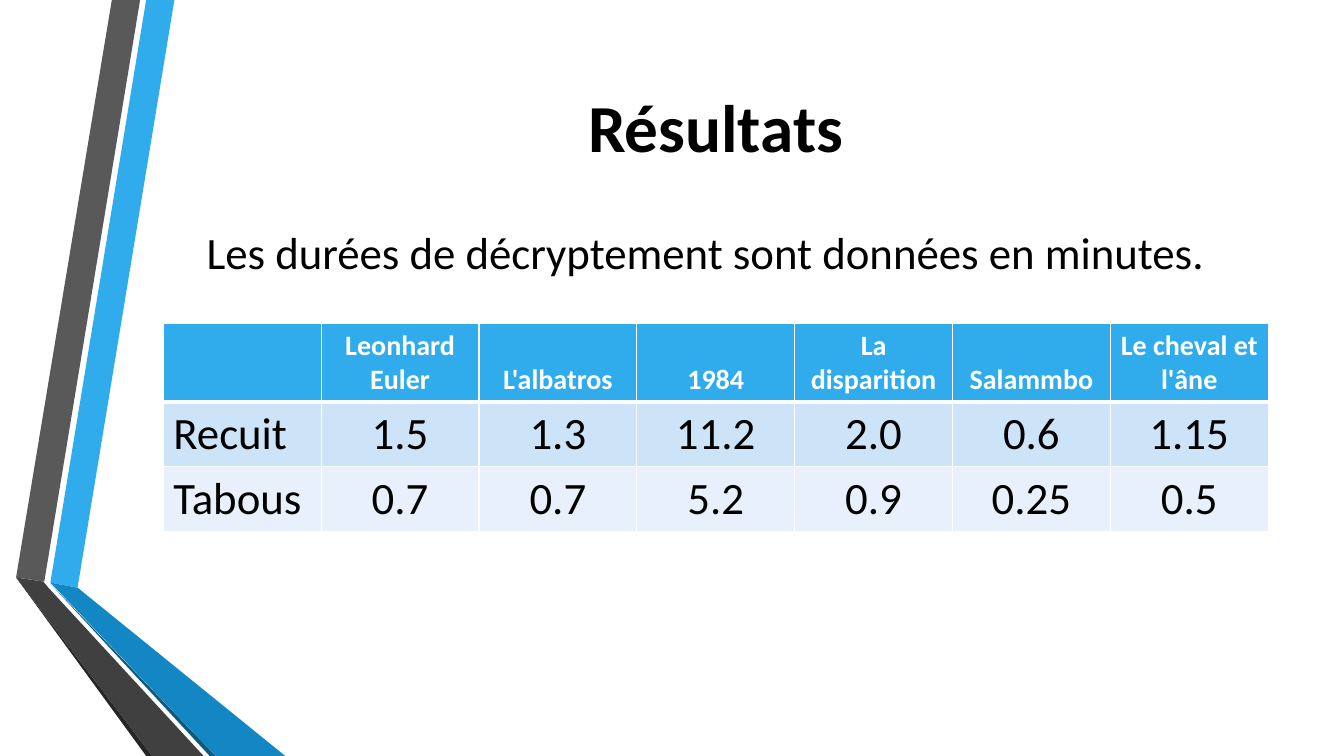
from dataclasses import dataclass
from lxml.etree import SubElement
from pptx import Presentation
from pptx.dml.color import RGBColor
from pptx.enum.text import MSO_ANCHOR, PP_ALIGN
from pptx.oxml.ns import qn

PX = 9144


@dataclass(frozen=True)
class Theme:
    font: str = "Calibri"
    black: str = "000000"
    white: str = "FFFFFF"
    blue: str = "30ACEC"
    deep: str = "1287C3"
    navy: str = "0C5A82"
    gray: str = "595959"
    dark: str = "404040"
    coal: str = "262626"
    bands: tuple = ("CDE3F8", "E8F1FB")
    title: int = 48
    body: int = 32
    head: int = 20


THEME = Theme()

RIBBONS = [
    (THEME.blue, [(50, 578), (77, 583), (173, 0), (145, 0)]),
    (THEME.gray, [(139, 0), (111, 0), (16, 573), (44, 577)]),
    (THEME.coal, [(16, 573), (145, 750), (151, 750)]),
    (THEME.navy, [(50, 579), (208, 750), (214, 750)]),
    (THEME.deep, [(50, 578), (214, 750), (283, 750), (77, 583)]),
    (THEME.dark, [(202, 750), (48, 583), (43, 577), (16, 573), (151, 750)]),
]

HEADS = ["", "Leonhard\nEuler", "L'albatros", "1984", "La disparition",
         "Salammbo", "Le cheval et l'âne"]
TIMES = [
    ["Recuit", "1.5", "1.3", "11.2", "2.0", "0.6", "1.15"],
    ["Tabous", "0.7", "0.7", "5.2", "0.9", "0.25", "0.5"],
]


def paint(fill, color):
    fill.solid()
    fill.fore_color.rgb = RGBColor.from_string(color)


def write(frame, text, size, color, bold=False, align=PP_ALIGN.LEFT):
    frame.text = text
    form = {"name": THEME.font, "size": size * 12700, "bold": bold}
    for para in frame.paragraphs:
        para.alignment = align
        for run in para.runs:
            for key, value in form.items():
                setattr(run.font, key, value)
            run.font.color.rgb = RGBColor.from_string(color)


def add_text(slide, box, text, size, anchor, **form):
    frame = slide.shapes.add_textbox(*(n * PX for n in box)).text_frame
    frame.word_wrap = True
    frame.vertical_anchor = anchor
    write(frame, text, size, THEME.black, **form)


def add_ribbons(slide, left, top):
    for color, points in RIBBONS:
        start, *rest = [(left + x, top + y) for x, y in points]
        pen = slide.shapes.build_freeform(*start, scale=PX)
        pen.add_line_segments(rest, close=True)
        shape = pen.convert_to_shape()
        shape.shadow.inherit = False
        paint(shape.fill, color)
        shape.line.fill.background()


def add_edges(cell, widths):
    props = cell._tc.get_or_add_tcPr()
    for spot, (side, width) in enumerate(widths.items()):
        edge = SubElement(props, qn(f"a:ln{side}"), w=str(width * 12700))
        fill = SubElement(edge, qn("a:solidFill"))
        SubElement(fill, qn("a:srgbClr"), val=THEME.white)
        props.insert(spot, edge)


def add_times(slide, box):
    rows = [HEADS] + TIMES
    left, top, width, height = (n * PX for n in box)
    table = slide.shapes.add_table(
        len(rows), len(HEADS), left, top, width, height).table
    for col in table.columns:
        col.width = width // len(HEADS)
    for r, row in enumerate(rows):
        head = r == 0
        table.rows[r].height = (78 if head else 64) * PX
        for c, text in enumerate(row):
            cell = table.cell(r, c)
            cell.vertical_anchor = MSO_ANCHOR.BOTTOM if head else MSO_ANCHOR.TOP
            paint(cell.fill, THEME.blue if head else THEME.bands[r - 1])
            add_edges(cell, {"L": 1, "R": 1, "T": 3 if r == 1 else 1,
                             "B": 3 if head else 1})
            write(cell.text_frame, text,
                  THEME.head if head else THEME.body,
                  THEME.white if head else THEME.black, bold=head,
                  align=PP_ALIGN.CENTER if c else PP_ALIGN.LEFT)


def add_results(deck):
    slide = deck.slides.add_slide(deck.slide_layouts[6])
    paint(slide.background.fill, THEME.white)
    add_ribbons(slide, 0, 0)
    add_text(slide, (162, 75, 1096, 100), "Résultats", THEME.title,
             MSO_ANCHOR.MIDDLE, bold=True, align=PP_ALIGN.CENTER)
    add_times(slide, (162, 321, 1096, 206))
    add_text(slide, (195, 218, 1029, 64),
             "Les durées de décryptement sont données en minutes.",
             THEME.body, MSO_ANCHOR.TOP)


def main():
    deck = Presentation()
    deck.slide_width, deck.slide_height = 1333 * PX, 750 * PX
    add_results(deck)
    deck.save("out.pptx")


if __name__ == "__main__":
    main()
